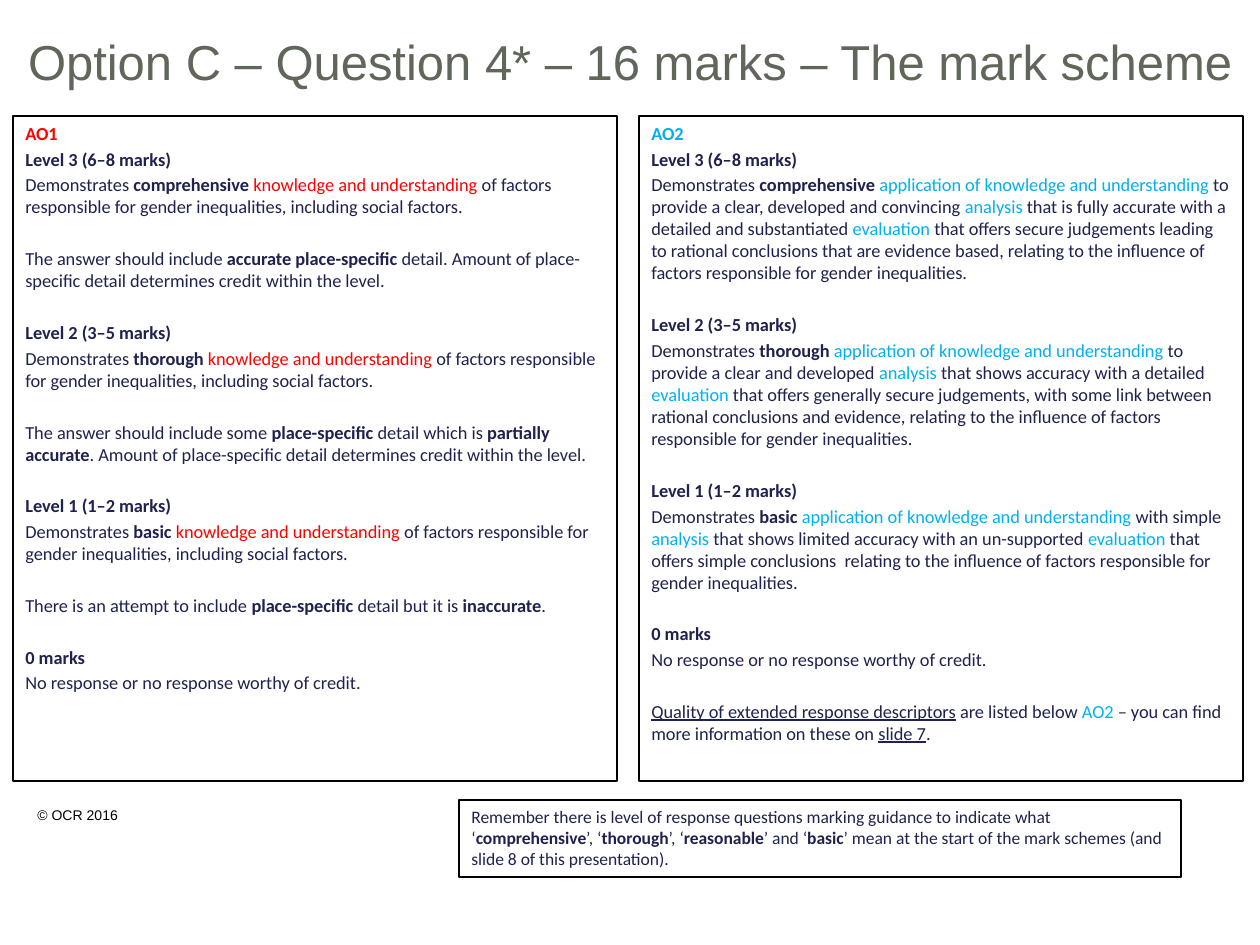
from dataclasses import dataclass
from typing import Optional

from pptx import Presentation
from pptx.dml.color import RGBColor
from pptx.enum.shapes import MSO_SHAPE
from pptx.enum.text import MSO_ANCHOR, PP_ALIGN
from pptx.util import Pt

SCALE = 914400 / 126
BLACK = RGBColor(0x00, 0x00, 0x00)
WHITE = RGBColor(0xFF, 0xFF, 0xFF)
OLIVE = RGBColor(0x60, 0x66, 0x5A)
NAVY = RGBColor(0x1F, 0x22, 0x4E)
RED = RGBColor(0xFF, 0x00, 0x00)
BLUE = RGBColor(0x00, 0xB0, 0xF0)

BOLD, TINT, LINE = "^", "~", "_"
NEAR, FAR = Pt(2.1), Pt(17)

HIGH = "^Level 3 (6–8 marks)^"
MID = "^Level 2 (3–5 marks)^"
LOW = "^Level 1 (1–2 marks)^"
NONE = ("^0 marks^", "No response or no response worthy of credit.")
KNOW = (
    "~knowledge and understanding~ of factors responsible for gender "
    "inequalities, including social factors."
)
APPLY = "~application of knowledge and understanding~"
ENDING = "relating to the influence of factors responsible for gender inequalities."
CREDIT = "Amount of place-specific detail determines credit within the level."

Block = tuple[str, ...]

FIRST: tuple[Block, ...] = (
    ("^~AO1~^", HIGH, f"Demonstrates ^comprehensive^ {KNOW}"),
    (f"The answer should include ^accurate place-specific^ detail. {CREDIT}",),
    (MID, f"Demonstrates ^thorough^ {KNOW}"),
    (
        "The answer should include some ^place-specific^ detail which is "
        f"^partially accurate^. {CREDIT}",
    ),
    (LOW, f"Demonstrates ^basic^ {KNOW}"),
    ("There is an attempt to include ^place-specific^ detail but it is ^inaccurate^.",),
    NONE,
)

SECOND: tuple[Block, ...] = (
    (
        "^~AO2~^",
        HIGH,
        f"Demonstrates ^comprehensive^ {APPLY} to provide a clear, developed and "
        "convincing ~analysis~ that is fully accurate with a detailed and "
        "substantiated ~evaluation~ that offers secure judgements leading to "
        f"rational conclusions that are evidence based, {ENDING}",
    ),
    (
        MID,
        f"Demonstrates ^thorough^ {APPLY} to provide a clear and developed "
        "~analysis~ that shows accuracy with a detailed ~evaluation~ that offers "
        "generally secure judgements, with some link between rational conclusions "
        f"and evidence, {ENDING}",
    ),
    (
        LOW,
        f"Demonstrates ^basic^ {APPLY} with simple ~analysis~ that shows limited "
        "accuracy with an un-supported ~evaluation~ that offers simple "
        f"conclusions  {ENDING}",
    ),
    NONE,
    (
        "_Quality of extended response descriptors_ are listed below ~AO2~ – you "
        "can find more information on these on _slide 7_.",
    ),
)

NOTE = (
    "Remember there is level of response questions marking guidance to indicate "
    "what ‘^comprehensive^’, ‘^thorough^’, ‘^reasonable^’ and ‘^basic^’ mean at "
    "the start of the mark schemes (and slide 8 of this presentation)."
)


@dataclass(frozen=True)
class Box:
    left: int
    top: int
    width: int
    height: int
    blocks: tuple[Block, ...]
    size: float
    ink: RGBColor = NAVY
    tint: Optional[RGBColor] = None
    face: str = "Calibri"
    framed: bool = True
    align: PP_ALIGN = PP_ALIGN.LEFT
    anchor: MSO_ANCHOR = MSO_ANCHOR.TOP


PANELS = [
    Box(13 + 626 * i, 116, 604, 665, blocks, 10.5, tint=tint)
    for i, (blocks, tint) in enumerate(((FIRST, RED), (SECOND, BLUE)))
]

BOXES = [
    Box(25, 800, 238, 30, (("© OCR 2016",),), 8, BLACK, face="Arial", framed=False),
    Box(
        0, 24, 1260, 74,
        (("Option C – Question 4* – 16 marks – The mark scheme",),),
        28, OLIVE, face="Arial", framed=False,
        align=PP_ALIGN.CENTER, anchor=MSO_ANCHOR.MIDDLE,
    ),
    *PANELS,
    Box(459, 800, 722, 77, ((NOTE,),), 10),
]


def px(count: int) -> int:
    return round(count * SCALE)


def split(text: str) -> list[tuple[str, frozenset[str]]]:
    parts: list[tuple[str, frozenset[str]]] = []
    marks: frozenset[str] = frozenset()
    piece = ""
    for char in text:
        if char in (BOLD, TINT, LINE):
            if piece:
                parts.append((piece, marks))
            piece, marks = "", marks ^ {char}
        else:
            piece += char
    return parts + [(piece, marks)] if piece else parts


def write(para, text: str, box: Box) -> None:
    para.alignment = box.align
    para.font.size = Pt(box.size)
    para.font.name = box.face
    para.font.color.rgb = box.ink
    for piece, marks in split(text):
        run = para.add_run()
        run.text = piece
        if BOLD in marks:
            run.font.bold = True
        if LINE in marks:
            run.font.underline = True
        if TINT in marks:
            run.font.color.rgb = box.tint


def draw(slide, box: Box) -> None:
    place = [px(n) for n in (box.left, box.top, box.width, box.height)]
    if box.framed:
        shape = slide.shapes.add_shape(MSO_SHAPE.RECTANGLE, *place)
        shape.shadow.inherit = False
        shape.fill.solid()
        shape.fill.fore_color.rgb = WHITE
        shape.line.color.rgb = BLACK
        shape.line.width = Pt(0.75)
    else:
        shape = slide.shapes.add_textbox(*place)
    frame = shape.text_frame
    frame.word_wrap = True
    frame.vertical_anchor = box.anchor
    para = frame.paragraphs[0]
    for i, block in enumerate(box.blocks):
        for j, text in enumerate(block):
            if i or j:
                para = frame.add_paragraph()
                para.space_before = NEAR if j else FAR
            write(para, text, box)


def main() -> None:
    deck = Presentation()
    deck.slide_width, deck.slide_height = px(1260), px(945)
    slide = deck.slides.add_slide(deck.slide_layouts[6])
    for box in BOXES:
        draw(slide, box)
    deck.save("out.pptx")


if __name__ == "__main__":
    main()
